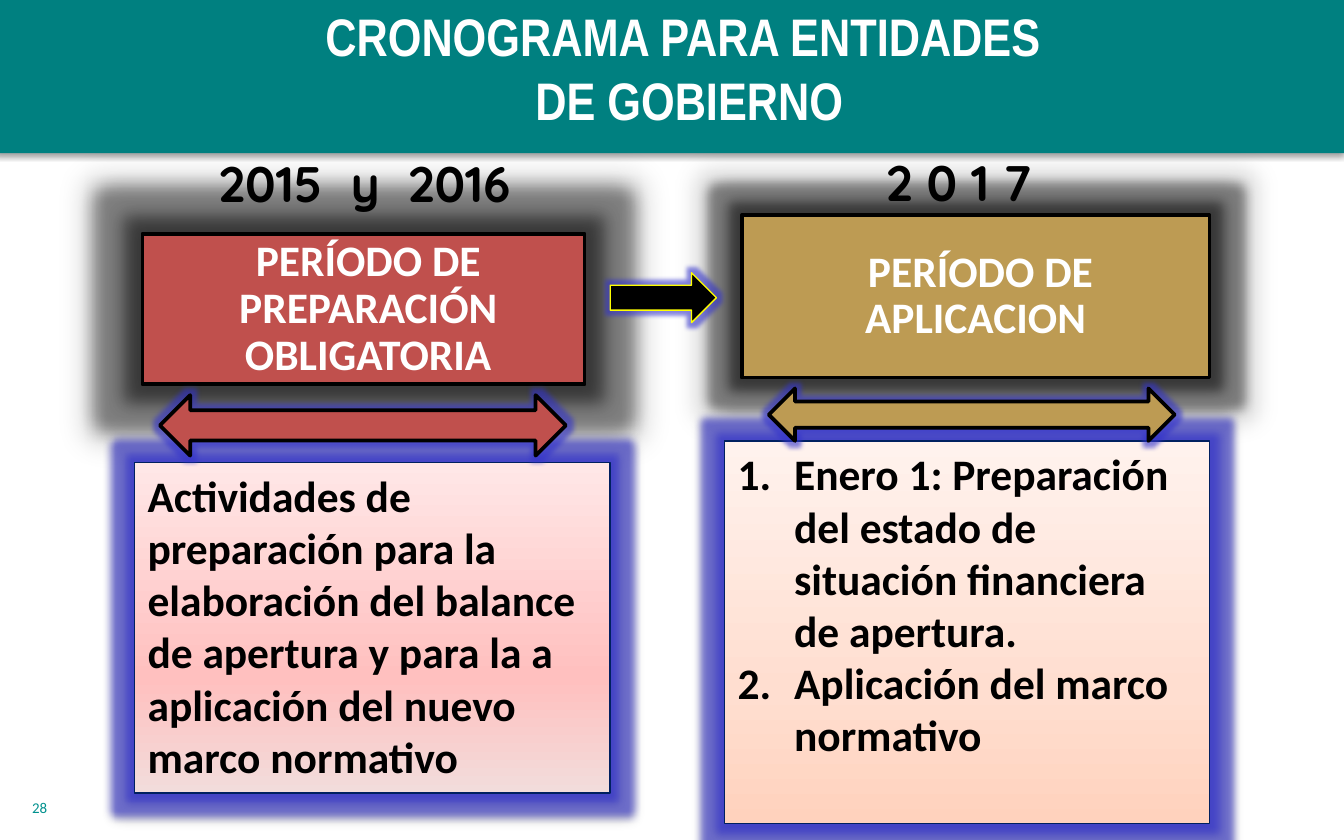
from copy import deepcopy

from lxml import etree
from pptx import Presentation
from pptx.dml.color import RGBColor
from pptx.enum.shapes import MSO_SHAPE
from pptx.enum.text import MSO_ANCHOR, MSO_AUTO_SIZE, PP_ALIGN
from pptx.oxml.ns import qn
from pptx.util import Inches, Pt

RECT = MSO_SHAPE.RECTANGLE
RIGHT_ARROW = MSO_SHAPE.RIGHT_ARROW
DOUBLE_ARROW = MSO_SHAPE.LEFT_RIGHT_ARROW
LEFT, CENTER = PP_ALIGN.LEFT, PP_ALIGN.CENTER
TOP, MIDDLE = MSO_ANCHOR.TOP, MSO_ANCHOR.MIDDLE

COLORS = {
    "band": "008080", "number": "00918E", "white": "FFFFFF", "black": "000000",
    "red": "C0504D", "gold": "BD9B53", "navy": "002060", "yellow": "FFFF00",
    "glow": "3333CC",
}
RED_FADE = [(0, "F2DCDB"), (0.35, "FFC0BF"), (1, "FFE7E7")]
ORANGE_FADE = [(0, "FFD2BD"), (0.35, "FFDED0"), (1, "FFF2ED")]


def rgb(name):
    return RGBColor.from_string(COLORS[name])


def add_effect(sp, tag, color, alpha, **attrs):
    effects = sp._element.spPr.find(qn("a:effectLst"))
    effect = etree.SubElement(effects, qn(tag), attrs)
    clr = etree.SubElement(effect, qn("a:srgbClr"), val=COLORS[color])
    etree.SubElement(clr, qn("a:alpha"), val=str(alpha * 1000))


def add_glow(sp, color, radius, alpha):
    add_effect(sp, "a:glow", color, alpha, rad=str(Pt(radius)))


def add_shadow(sp):
    add_effect(sp, "a:outerShdw", "black", 38, blurRad=str(Pt(3.1)),
               dist=str(Pt(1.6)), dir="5400000", rotWithShape="0")


def set_fade(sp, fade):
    sp.fill.gradient()
    sp.fill.gradient_angle = 90
    gs_lst = sp._element.spPr.find(qn("a:gradFill")).find(qn("a:gsLst"))
    gs_lst.insert(1, deepcopy(gs_lst[0]))
    for stop, (position, color) in zip(sp.fill.gradient_stops, fade):
        stop.position = position
        stop.color.rgb = RGBColor.from_string(color)


def add_block(s, kind, box, fill=None, line=None, width=0.75):
    sp = s.shapes.add_shape(kind, *map(Inches, box))
    sp.shadow.inherit = False
    if fill:
        sp.fill.solid()
        sp.fill.fore_color.rgb = rgb(fill)
    if line:
        sp.line.color.rgb = rgb(line)
        sp.line.width = Pt(width)
    else:
        sp.line.fill.background()
    return sp


def write(sp, lines, size, color, font="Calibri", bold=True, align=LEFT,
          anchor=TOP, spacing=None, numbered=False):
    tf = sp.text_frame
    tf.word_wrap = True
    tf.auto_size = MSO_AUTO_SIZE.NONE
    tf.vertical_anchor = anchor
    for i, line in enumerate(lines):
        p = tf.add_paragraph() if i else tf.paragraphs[0]
        p.alignment = align
        if spacing:
            p.line_spacing = spacing
        if numbered:
            pPr = p._p.get_or_add_pPr()
            pPr.set("marL", str(Inches(0.42)))
            pPr.set("indent", str(Inches(-0.42)))
            etree.SubElement(pPr, qn("a:buAutoNum"), type="arabicPeriod")
        r = p.add_run()
        r.text = line
        r.font.name = font
        r.font.size = Pt(size)
        r.font.bold = bold
        r.font.color.rgb = rgb(color)


def add_label(s, box, text, size, color, **style):
    write(s.shapes.add_textbox(*map(Inches, box)), [text], size, color, **style)


def add_period(s, box, fill, text, radius):
    sp = add_block(s, RECT, box, fill, "black", 2)
    add_glow(sp, "black", radius, 40)
    add_effect(sp, "a:outerShdw", "black", 40, blurRad=str(Pt(10)), dist="0",
               sx="104000", sy="110000", algn="ctr", rotWithShape="0")
    write(sp, [text], 23.3, "white", align=CENTER, anchor=MIDDLE, spacing=0.9)
    tf = sp.text_frame
    tf.margin_left, tf.margin_right = Inches(0.51), Inches(0.44)
    tf.margin_top = tf.margin_bottom = Inches(0.04)


def add_detail(s, box, fade, lines, numbered=False):
    sp = add_block(s, RECT, box, line="navy")
    set_fade(sp, fade)
    add_glow(sp, "glow", 8, 60)
    add_shadow(sp)
    write(sp, lines, 23.3, "black", numbered=numbered)


def add_arrow(s, kind, box, fill, line, width, radius=5):
    sp = add_block(s, kind, box, fill, line, width)
    add_glow(sp, "glow", radius, 60)


def add_title(s, box, lines):
    title = s.shapes.title
    title.left, title.top, title.width, title.height = map(Inches, box)
    write(title, lines, 28.3, "white", font="Arial Narrow", align=CENTER)
    # Bring the title in front of the band
    s.shapes._spTree.append(title._element)


def main():
    prs = Presentation()
    prs.slide_width, prs.slide_height = Inches(10), Inches(6.25)
    s = prs.slides.add_slide(prs.slide_layouts[5])

    # Header band, title and page number
    add_shadow(add_block(s, RECT, (-0.04, -0.02, 10.04, 1.16), "band"))
    add_title(s, (1.26, -0.02, 7.74, 1.05),
              ["CRONOGRAMA PARA ENTIDADES ", "DE GOBIERNO"])
    add_label(s, (0.14, 5.89, 2.08, 0.3), "28", 8, "number", bold=False)

    # Periods and their years
    add_period(s, (1.06, 1.74, 3.29, 1.12), "red",
               "PERÍODO DE PREPARACIÓN OBLIGATORIA", 18)
    add_period(s, (5.52, 1.6, 3.48, 1.21), "gold", "PERÍODO DE APLICACION ", 12)
    for box, years in (((1.46, 1.09, 2.51, 0.55), "2015  y  2016"),
                       ((6.38, 1.08, 1.51, 0.55), "2 0 1 7")):
        add_label(s, box, years, 26.7, "black", font="Quicksand", align=CENTER)

    # Activities of each period
    add_detail(s, (5.39, 3.28, 3.61, 2.85), ORANGE_FADE,
               ["Enero 1: Preparación del estado de situación financiera de apertura.",
                "Aplicación del marco normativo"], numbered=True)
    add_detail(s, (1, 3.44, 3.54, 2.46), RED_FADE,
               ["Actividades de preparación para la elaboración del balance de "
                "apertura y para la a aplicación del nuevo marco normativo"])

    # Arrows
    add_arrow(s, RIGHT_ARROW, (4.54, 2.03, 0.79, 0.37), "black", "yellow", 0.75)
    add_arrow(s, DOUBLE_ARROW, (1.19, 2.94, 3.02, 0.45), "red", "black", 2)
    add_arrow(s, DOUBLE_ARROW, (5.72, 2.89, 3.02, 0.39), "gold", "black", 2)

    prs.save("out.pptx")


if __name__ == "__main__":
    main()
